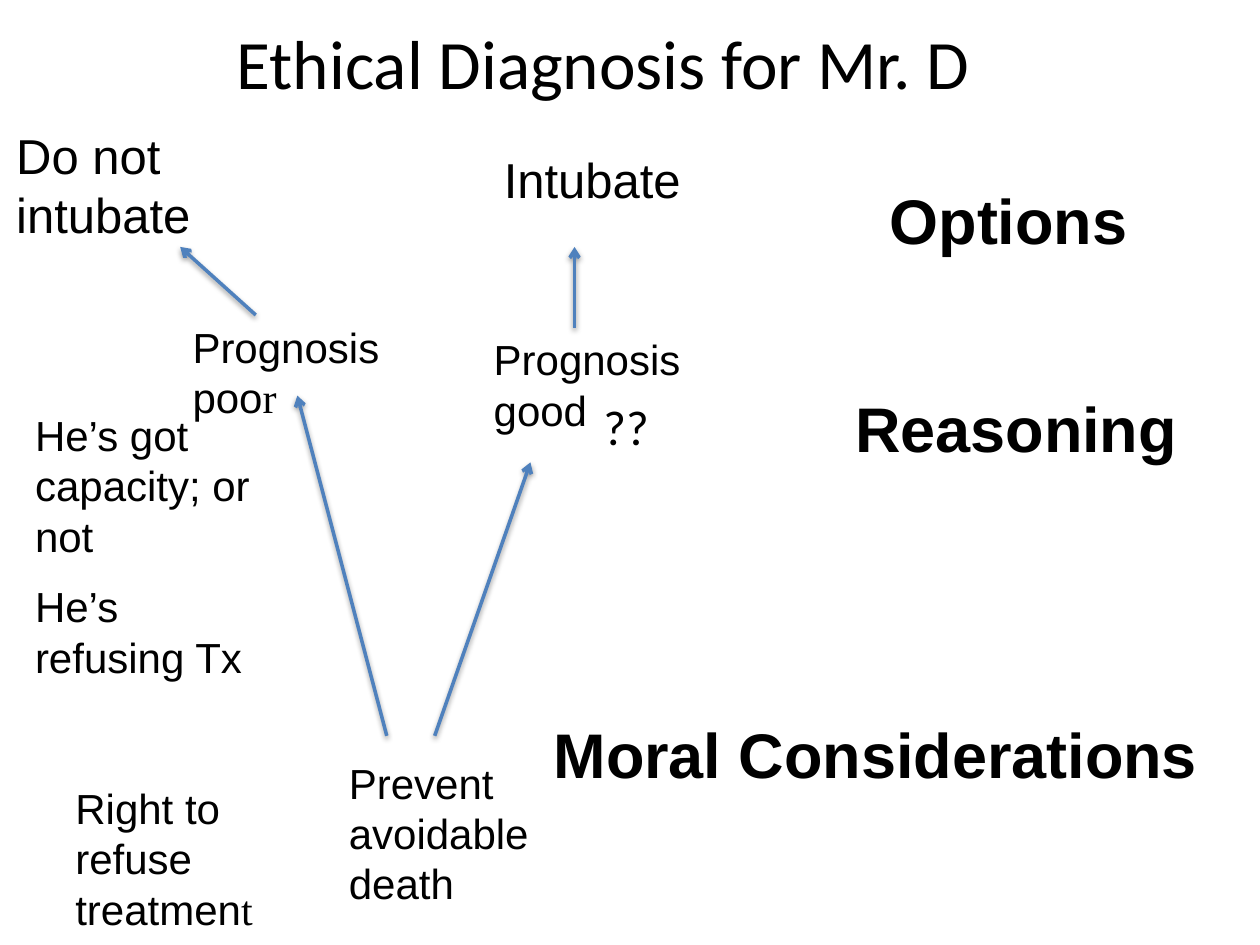
from lxml.etree import SubElement
from pptx import Presentation
from pptx.dml.color import RGBColor
from pptx.enum.shapes import MSO_CONNECTOR
from pptx.enum.text import MSO_ANCHOR, MSO_AUTO_SIZE, PP_ALIGN
from pptx.oxml import parse_xml
from pptx.oxml.ns import nsdecls, qn
from pptx.util import Inches, Pt

COLORS = {"text": "000000", "arrow": "4F81BD", "shadow": "000000"}
HEAD = {"size": 36, "bold": True, "align": PP_ALIGN.CENTER}
LARGE = {"size": 28}
SHADOW = (
    f'<a:effectLst {nsdecls("a")}><a:outerShdw blurRad="{Pt(3.1)}" dist="{Pt(1.6)}" '
    f'dir="5400000" rotWithShape="0"><a:srgbClr val="{COLORS["shadow"]}">'
    '<a:alpha val="38000"/></a:srgbClr></a:outerShdw></a:effectLst>'
)


class Board:
    """Draws the title, labels and arrows of an ethics map on one slide."""

    def __init__(self, deck):
        self.slide = deck.slides.add_slide(deck.slide_layouts[5])

    def add_text(self, para, text, size=24, font="Arial", bold=False, align=PP_ALIGN.LEFT):
        para.alignment = align
        run = para.add_run()
        run.text = text
        style = {"size": Pt(size), "name": font, "bold": bold}
        for key, value in style.items():
            setattr(run.font, key, value)
        run.font.color.rgb = RGBColor.from_string(COLORS["text"])

    def title(self, text, left, top, width, height):
        shape = self.slide.shapes.title
        place = {"left": left, "top": top, "width": width, "height": height}
        for key, value in place.items():
            setattr(shape, key, Inches(value))
        frame = shape.text_frame
        frame.vertical_anchor = MSO_ANCHOR.MIDDLE
        self.add_text(frame.paragraphs[0], text, 39.6, "Calibri", align=PP_ALIGN.CENTER)

    def label(self, text, place, end="", wrap=True, grow=True, **style):
        box = self.slide.shapes.add_textbox(*map(Inches, place))
        frame = box.text_frame
        frame.word_wrap = wrap
        frame.auto_size = MSO_AUTO_SIZE.SHAPE_TO_FIT_TEXT if grow else MSO_AUTO_SIZE.NONE
        self.add_text(frame.paragraphs[0], text, **style)
        if end:
            self.add_text(frame.paragraphs[0], end, font="Times New Roman")
        return box

    def arrow(self, start, stop):
        line = self.slide.shapes.add_connector(
            MSO_CONNECTOR.STRAIGHT, *map(Inches, start + stop)
        )
        line.line.width = Pt(2)
        line.line.color.rgb = RGBColor.from_string(COLORS["arrow"])
        props = line._element.spPr
        SubElement(props.get_or_add_ln(), qn("a:tailEnd")).set("type", "arrow")
        props.append(parse_xml(SHADOW))
        return line


def main():
    deck = Presentation()
    deck.slide_width, deck.slide_height = Inches(10), Inches(7.5)
    board = Board(deck)
    board.title("Ethical Diagnosis for Mr. D", 0.29, 0.13, 9, 0.72)

    board.label("Options", (6.95, 1.39, 2.11, 0.71), wrap=False, **HEAD)
    board.label("Moral Considerations", (4.27, 5.63, 5.36, 0.71), wrap=False, **HEAD)
    board.label("Reasoning", (6.63, 3.04, 2.87, 0.71), **HEAD)

    board.label("Do not intubate", (0.03, 0.95, 2.18, 1.04), **LARGE)
    board.label("Intubate", (3.9, 1.14, 1.87, 0.57), **LARGE)

    poor = board.label("Prognosis poo", (1.43, 2.5, 1.86, 0.64), end="r", grow=False)
    board.label("Prognosis good", (3.82, 2.6, 1.94, 0.91))
    board.label("??", (4.69, 3.1, 0.82, 0.57), font="Calibri", **LARGE)
    board.label("He’s got capacity; or not", (0.18, 3.2, 1.96, 1.31))
    board.label("He’s refusing Tx", (0.18, 4.56, 1.86, 0.91))

    board.label("Right to refuse treatmen", (0.5, 6.16, 1.8, 1.31), end="t")
    board.label("Prevent avoidable death", (2.67, 5.96, 1.89, 1.31))

    board.arrow((3.07, 5.84), (2.36, 3.14)).end_connect(poor, 2)
    board.arrow((2.03, 2.5), (1.43, 1.96))
    board.arrow((3.45, 5.84), (4.21, 3.67))
    board.arrow((4.56, 2.6), (4.56, 1.96))
    deck.save("out.pptx")


if __name__ == "__main__":
    main()
